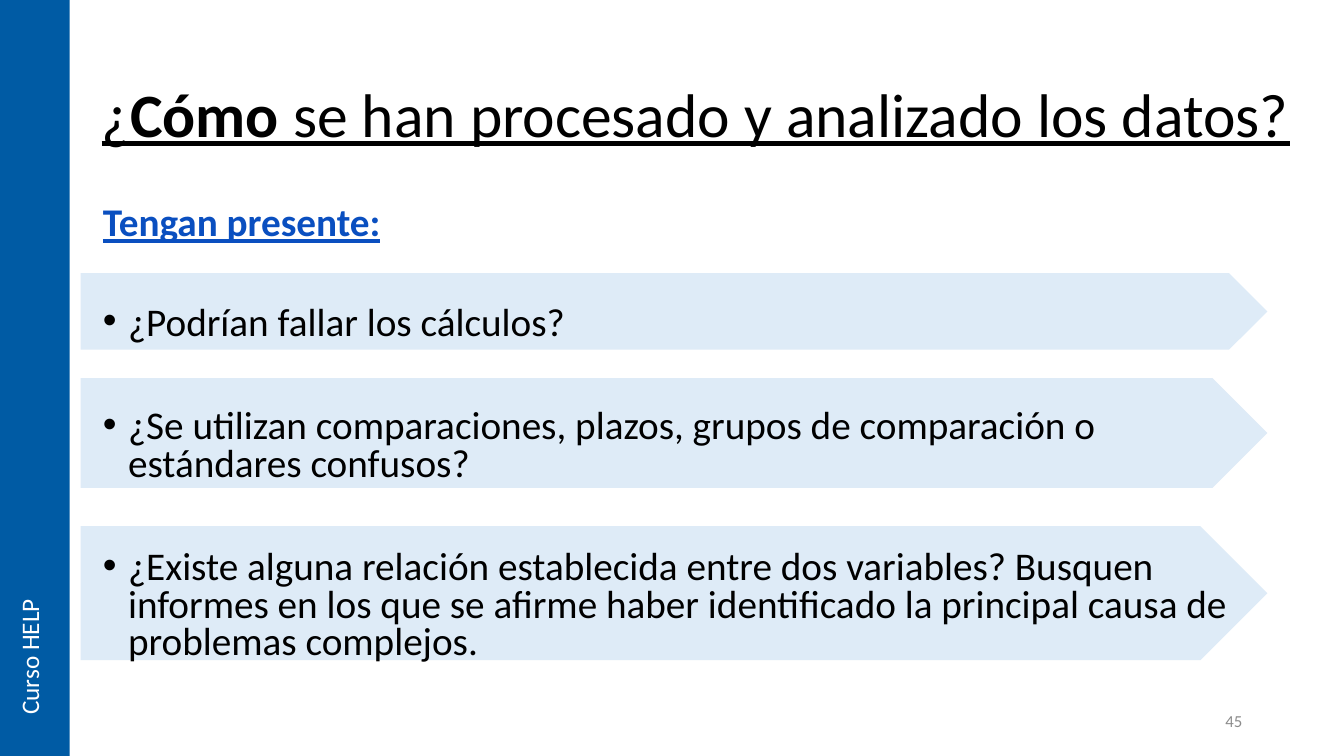
from pptx import Presentation
from pptx.dml.color import RGBColor
from pptx.enum.shapes import MSO_SHAPE
from pptx.enum.text import MSO_ANCHOR, MSO_AUTO_SIZE, PP_ALIGN
from pptx.oxml.ns import qn
from pptx.util import Inches, Pt
from lxml import etree

# Content
TITLE = [("¿", False), ("Cómo", True), (" se han procesado y analizado los datos?", False)]
HEADING = "Tengan presente:"
# question, space before (pt), arrow top, arrow height (in)
QUESTIONS = [
    ("¿Podrían fallar los cálculos?", 44, 2.71, 0.76),
    ("¿Se utilizan comparaciones, plazos, grupos de comparación o estándares confusos?",
     47, 3.75, 1.09),
    ("¿Existe alguna relación establecida entre dos variables? Busquen informes en los que "
     "se afirme haber identificado la principal causa de problemas complejos.",
     47, 5.22, 1.33),
]
COURSE = "Curso HELP"
PAGE_NUMBER = "45"

# Style
FONT = "Calibri"
BLACK = RGBColor(0x00, 0x00, 0x00)
WHITE = RGBColor(0xFF, 0xFF, 0xFF)
GRAY = RGBColor(0x8C, 0x8C, 0x8C)
HEADING_BLUE = RGBColor(0x0A, 0x4F, 0xC0)
BAND_BLUE = RGBColor(0x00, 0x5B, 0xA4)
ARROW_BLUE = RGBColor(0xDE, 0xEB, 0xF7)
RECTANGLE, PENTAGON = MSO_SHAPE.RECTANGLE, MSO_SHAPE.PENTAGON
MIDDLE, TOP = MSO_ANCHOR.MIDDLE, MSO_ANCHOR.TOP
CENTER, LEFT, RIGHT = PP_ALIGN.CENTER, PP_ALIGN.LEFT, PP_ALIGN.RIGHT
NO_FIT = MSO_AUTO_SIZE.NONE
INDENT = Inches(0.25)


def place(shape, left, top, width, height):
    shape.left, shape.top = Inches(left), Inches(top)
    shape.width, shape.height = Inches(width), Inches(height)


def add_block(slide, kind, left, top, width, height, color):
    block = slide.shapes.add_shape(
        kind, Inches(left), Inches(top), Inches(width), Inches(height))
    block.shadow.inherit = False
    block.fill.solid()
    block.fill.fore_color.rgb = color
    block.line.fill.background()
    return block


def set_font(font, size, color, bold=False, underline=False):
    font.name, font.size = FONT, Pt(size)
    font.color.rgb = color
    font.bold, font.underline = bold, underline


def set_bullet(paragraph, char=None):
    properties = paragraph._p.get_or_add_pPr()
    properties.set("marL", str(INDENT if char else 0))
    properties.set("indent", str(-INDENT if char else 0))
    bullet = etree.SubElement(properties, qn("a:buChar" if char else "a:buNone"))
    if char:
        bullet.set("char", char)


def add_label(slide, text, left, top, width, height, size, color, align):
    label = slide.shapes.add_textbox(
        Inches(left), Inches(top), Inches(width), Inches(height))
    paragraph = label.text_frame.paragraphs[0]
    paragraph.text, paragraph.alignment = text, align
    set_font(paragraph.font, size, color)
    return label


prs = Presentation()
prs.slide_width, prs.slide_height = Inches(13.33), Inches(7.5)
slide = prs.slides.add_slide(prs.slide_layouts[1])

# Arrows, placed behind the text
for position, (_, _, top, height) in enumerate(QUESTIONS):
    arrow = add_block(slide, PENTAGON, 0.8, top, 11.77, height, ARROW_BLUE)
    slide.shapes.element.insert(2 + position, arrow.element)

# Title
title = slide.shapes.title
place(title, 0.69, 0.44, 12.42, 1.45)
title.text_frame.auto_size = NO_FIT
title.text_frame.vertical_anchor = MIDDLE
title_line = title.text_frame.paragraphs[0]
title_line.alignment, title_line.line_spacing = CENTER, 0.9
for text, bold in TITLE:
    run = title_line.add_run()
    run.text = text
    set_font(run.font, 44, BLACK, bold, True)

# Heading and questions
body = slide.placeholders[1]
place(body, 0.92, 2, 11.5, 4.76)
body_frame = body.text_frame
body_frame.auto_size, body_frame.vertical_anchor = NO_FIT, TOP
heading = body_frame.paragraphs[0]
heading.text = HEADING
heading.line_spacing, heading.space_before = 0.8, Pt(0)
set_bullet(heading)
set_font(heading.font, 28, HEADING_BLUE, True, True)
for text, space, _, _ in QUESTIONS:
    question = body_frame.add_paragraph()
    question.text, question.alignment = text, LEFT
    question.line_spacing, question.space_before = 0.8, Pt(space)
    set_bullet(question, "•")
    set_font(question.font, 28, BLACK)

# Side band with course name, and page number
add_block(slide, RECTANGLE, 0, 0, 0.69, 7.5, BAND_BLUE)
course = add_label(slide, COURSE, 0.09, 5.61, 0.5, 1.58, 18, WHITE, LEFT)
course.text_frame.word_wrap = False
course.element.txBody.bodyPr.set("vert", "vert270")
page = add_label(slide, PAGE_NUMBER, 9.42, 6.95, 3, 0.4, 12, GRAY, RIGHT)
page.text_frame.word_wrap = True
page.text_frame.vertical_anchor = MIDDLE

prs.save("out.pptx")
